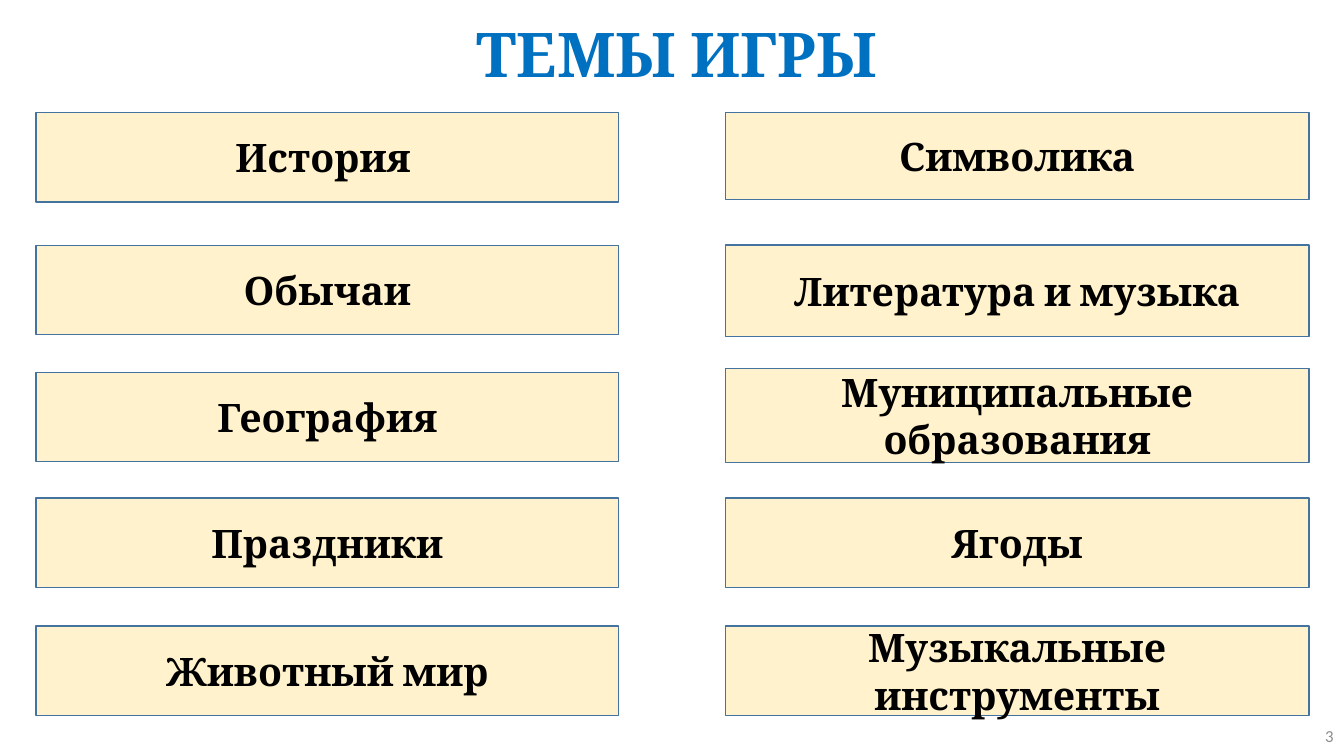
"""Build the slide that lists the themes of the game."""
from dataclasses import dataclass

from pptx import Presentation
from pptx.dml.color import RGBColor
from pptx.enum.shapes import MSO_SHAPE
from pptx.enum.text import MSO_ANCHOR as Anchor, MSO_AUTO_SIZE as AutoSize, PP_ALIGN as Align
from pptx.util import Cm, Pt


@dataclass(frozen=True)
class Theme:
    heading_font: str = "Cambria"
    number_font: str = "Calibri"
    title_color: str = "0070C0"
    text_color: str = "000000"
    number_color: str = "8C8C8C"
    box_fill: str = "FFF2CC"
    box_line: str = "43739E"
    title_size: int = 44
    box_size: int = 28
    number_size: int = 12
    line_width: int = 1


class SlideBuilder:
    def __init__(self, slide, theme):
        self.slide = slide
        self.theme = theme

    def set_text(self, shape, text, font_name, size, color, bold=True, align=Align.CENTER):
        frame = shape.text_frame
        frame.text = text
        frame.word_wrap = True
        frame.auto_size = AutoSize.NONE
        frame.vertical_anchor = Anchor.MIDDLE
        paragraph = frame.paragraphs[0]
        paragraph.alignment = align
        font = paragraph.runs[0].font
        font.name, font.size, font.bold = font_name, Pt(size), bold
        font.color.rgb = RGBColor.from_string(color)
        return paragraph

    def title(self, text, left, top, width, height):
        theme = self.theme
        shape = self.slide.shapes.title
        shape.left, shape.top = Cm(left), Cm(top)
        shape.width, shape.height = Cm(width), Cm(height)
        paragraph = self.set_text(
            shape, text, theme.heading_font, theme.title_size, theme.title_color)
        paragraph.line_spacing = 0.9

    def box(self, text, left, top, width, height):
        theme = self.theme
        shape = self.slide.shapes.add_shape(
            MSO_SHAPE.RECTANGLE, Cm(left), Cm(top), Cm(width), Cm(height))
        shape.shadow.inherit = False
        shape.fill.solid()
        shape.fill.fore_color.rgb = RGBColor.from_string(theme.box_fill)
        shape.line.color.rgb = RGBColor.from_string(theme.box_line)
        shape.line.width = Pt(theme.line_width)
        self.set_text(shape, text, theme.heading_font, theme.box_size, theme.text_color)

    def page_number(self, text, left, top, width, height):
        theme = self.theme
        shape = self.slide.shapes.add_textbox(Cm(left), Cm(top), Cm(width), Cm(height))
        self.set_text(shape, text, theme.number_font, theme.number_size, theme.number_color,
                      bold=False, align=Align.RIGHT)


LEFT_COLUMN = (
    ("История ", 2.84, 2.25),
    ("Обычаи", 6.18, 2.25),
    ("География", 9.38, 2.25),
    ("Праздники", 12.55, 2.25),
    ("Животный мир", 15.78, 2.25),
)
RIGHT_COLUMN = (
    ("Символика", 2.84, 2.19),
    ("Литература и музыка", 6.17, 2.31),
    ("Муниципальные образования", 9.29, 2.37),
    ("Ягоды", 12.55, 2.25),
    ("Музыкальные инструменты", 15.78, 2.25),
)


def main():
    presentation = Presentation()
    presentation.slide_width, presentation.slide_height = Cm(33.87), Cm(19.05)
    slide = presentation.slides.add_slide(presentation.slide_layouts[5])
    builder = SlideBuilder(slide, Theme())
    builder.title("ТЕМЫ ИГРЫ", 1.04, 0.05, 32.05, 2.79)
    for left, width, themes in ((0.91, 14.68, LEFT_COLUMN), (18.28, 14.71, RIGHT_COLUMN)):
        for text, top, height in themes:
            builder.box(text, left, top, width, height)
    builder.page_number("3", 26.24, 18.03, 7.62, 1.02)
    presentation.save("out.pptx")


if __name__ == "__main__":
    main()
